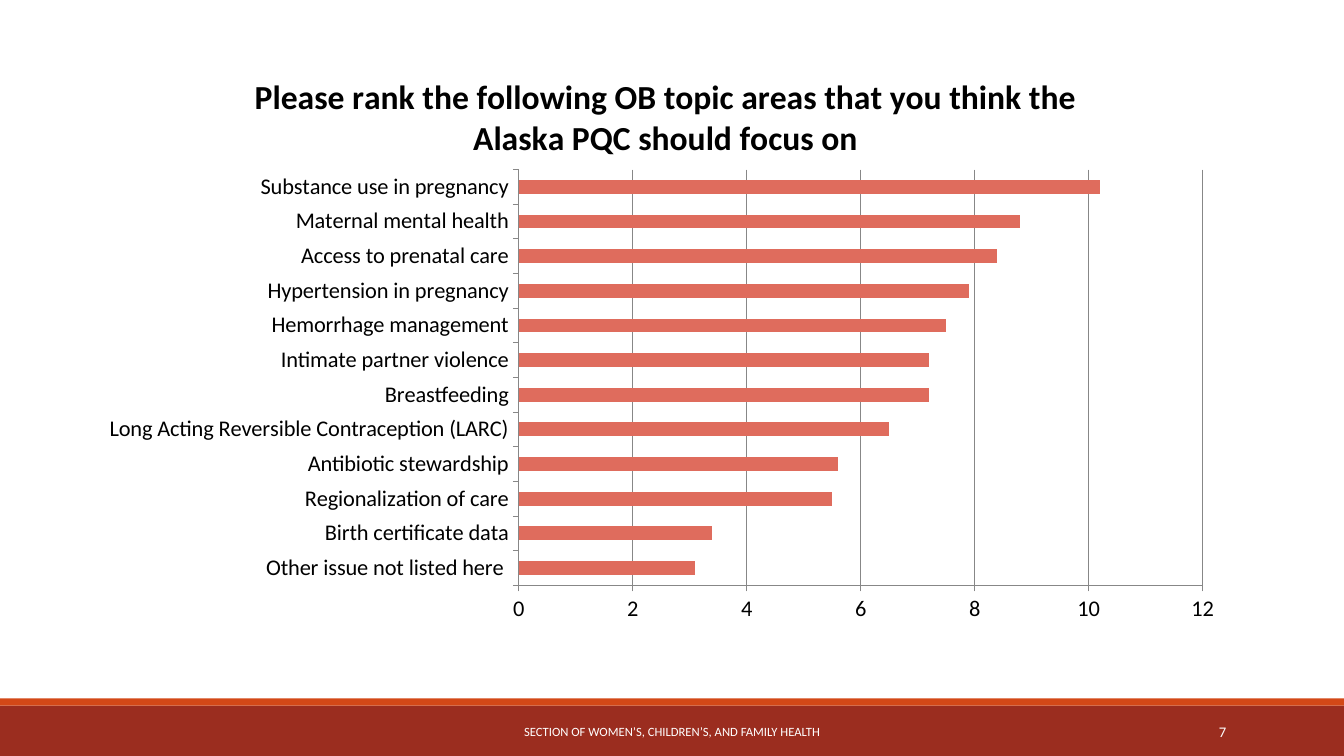
import pptx
import pptx.util
import pptx.chart.data
import pptx.dml.color
import pptx.enum.chart
import pptx.enum.shapes
import pptx.enum.text
import pptx.oxml

COLORS = {"band": "9B2D1F", "stripe": "D34817", "bar": "DF6C5D",
          "grid": "878787", "text": "000000", "light": "FFFFFF"}
FONT = "Calibri"
WIDTH, HEIGHT = 13.33, 7.5
ALIGN = pptx.enum.text.PP_ALIGN
TITLE = "Please rank the following OB topic areas that you think the Alaska PQC should focus on"
TOPICS = [
    ("Other issue not listed here ", 3.1),
    ("Birth certificate data", 3.4),
    ("Regionalization of care", 5.5),
    ("Antibiotic stewardship", 5.6),
    ("Long Acting Reversible Contraception (LARC)", 6.5),
    ("Breastfeeding", 7.2),
    ("Intimate partner violence", 7.2),
    ("Hemorrhage management", 7.5),
    ("Hypertension in pregnancy", 7.9),
    ("Access to prenatal care", 8.4),
    ("Maternal mental health", 8.8),
    ("Substance use in pregnancy", 10.2),
]


def color(name):
    return pptx.dml.color.RGBColor.from_string(COLORS[name])


def inches(box):
    return [pptx.util.Inches(length) for length in box]


def format_font(font, size, name="text", bold=False):
    font.name = FONT
    font.size = pptx.util.Pt(size)
    font.bold = bold
    font.color.rgb = color(name)


def add_text(page, box, text, size, align, name):
    frame = page.shapes.add_textbox(*inches(box)).text_frame
    frame.word_wrap = True
    frame.vertical_anchor = pptx.enum.text.MSO_ANCHOR.MIDDLE
    para = frame.paragraphs[0]
    para.alignment = align
    span = para.add_run()
    span.text = text
    format_font(span.font, size, name)


def add_bar(page, box, name):
    bar = page.shapes.add_shape(pptx.enum.shapes.MSO_SHAPE.RECTANGLE, *inches(box))
    bar.shadow.inherit = False
    bar.fill.solid()
    bar.fill.fore_color.rgb = color(name)
    bar.line.fill.background()


def add_footer(page, box):
    left, top, width, height = box
    stripe = 0.07
    add_bar(page, (left, top + stripe, width, height - stripe), "band")
    add_bar(page, (left, top, width, stripe), "stripe")
    text_top, text_height = top + 0.13, 0.4
    add_text(page, (left + 10.83, text_top, 1.43, text_height), "7",
             10.5, ALIGN.RIGHT, "light")
    add_text(page, (left + 4.03, text_top, 5.27, text_height),
             "SECTION OF WOMEN’S, CHILDREN’S, AND FAMILY HEALTH",
             9, ALIGN.CENTER, "light")


def make_layout(inner=False, **shares):
    target = '<c:layoutTarget val="inner"/>' if inner else ""
    modes = "".join(f'<c:{key}Mode val="edge"/>' for key in "xy")
    values = "".join(f'<c:{key} val="{share}"/>' for key, share in shares.items())
    return pptx.oxml.parse_xml(
        '<c:layout xmlns:c="http://schemas.openxmlformats.org/drawingml/2006/chart">'
        f"<c:manualLayout>{target}{modes}{values}</c:manualLayout></c:layout>")


def set_layout(parent, layout, index):
    for old in parent.findall(layout.tag):
        parent.remove(old)
    parent.insert(index, layout)


def format_axis(axis):
    axis.major_tick_mark = pptx.enum.chart.XL_TICK_MARK.OUTSIDE
    axis.minor_tick_mark = pptx.enum.chart.XL_TICK_MARK.NONE
    axis.format.line.color.rgb = color("grid")
    axis.format.line.width = pptx.util.Pt(0.75)
    format_font(axis.tick_labels.font, 16)


def add_ranking(page, box):
    data = pptx.chart.data.CategoryChartData()
    data.categories = [topic for topic, score in TOPICS]
    data.add_series("Series 1", [score for topic, score in TOPICS])
    kind = pptx.enum.chart.XL_CHART_TYPE.BAR_CLUSTERED
    chart = page.shapes.add_chart(kind, *inches(box), data).chart
    format_font(chart.font, 16)
    chart.has_legend = False
    chart.has_title = True
    para = chart.chart_title.text_frame.paragraphs[0]
    span = para.add_run()
    span.text = TITLE
    format_font(span.font, 24, bold=True)
    chart.chart_title.include_in_layout = False

    plot = chart.plots[0]
    plot.gap_width = 150
    plot.vary_by_categories = False
    bars = plot.series[0].format
    bars.fill.solid()
    bars.fill.fore_color.rgb = color("bar")

    format_axis(chart.category_axis)
    scale = chart.value_axis
    format_axis(scale)
    scale.minimum_scale, scale.maximum_scale, scale.major_unit = 0, 12, 2
    scale.tick_labels.number_format = "General"
    scale.tick_labels.number_format_is_linked = False
    scale.has_major_gridlines = True
    scale.major_gridlines.format.line.color.rgb = color("grid")
    scale.major_gridlines.format.line.width = pptx.util.Pt(0.75)

    title = chart.chart_title._element
    set_layout(title, make_layout(x=0.14, y=0.05), 1)
    area = chart._chartSpace.chart.plotArea
    set_layout(area, make_layout(inner=True, x=0.375, y=0.22, w=0.595, h=0.697), 0)


def main():
    deck = pptx.Presentation()
    deck.slide_width, deck.slide_height = inches((WIDTH, HEIGHT))
    page = deck.slides.add_slide(deck.slide_layouts[6])
    add_footer(page, (0, 6.93, WIDTH, HEIGHT - 6.93))
    add_ranking(page, (0.87, 0.38, 11.4, 5.92))
    deck.save("out.pptx")


if __name__ == "__main__":
    main()
